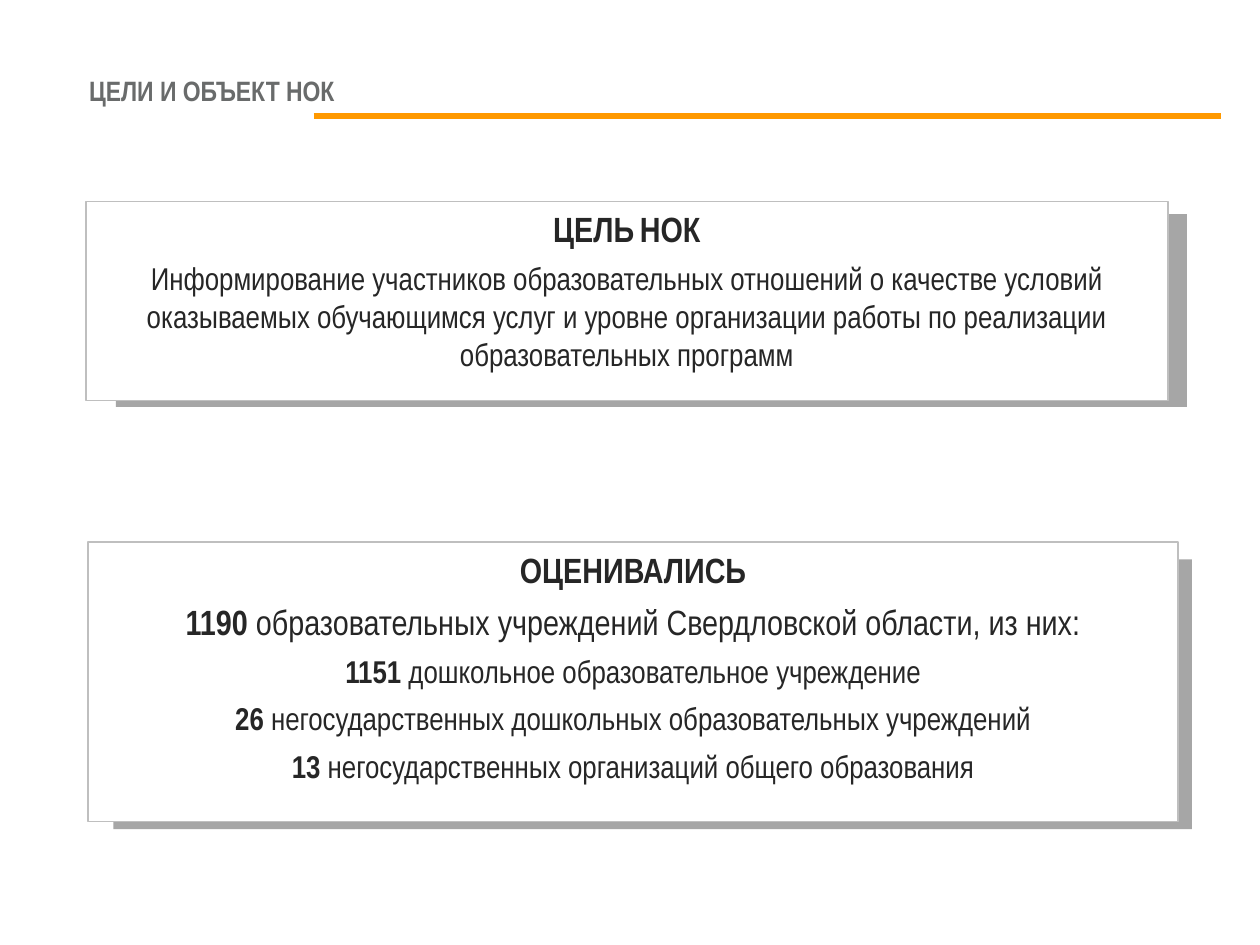
"""Build the slide on the goals and the object of the NOK assessment."""
from lxml import etree
from pptx import Presentation
from pptx.dml.color import RGBColor
from pptx.enum.shapes import MSO_CONNECTOR, MSO_SHAPE
from pptx.enum.text import MSO_ANCHOR, PP_ALIGN
from pptx.oxml.ns import qn
from pptx.util import Inches, Pt

FONT = "Arial Narrow"
ORANGE = RGBColor(0xFF, 0x99, 0x00)
TITLE_GRAY = RGBColor(0x69, 0x6B, 0x6B)
TEXT_DARK = RGBColor(0x26, 0x26, 0x26)
SHADE_GRAY = RGBColor(0xA6, 0xA6, 0xA6)
BORDER_GRAY = RGBColor(0xBF, 0xBF, 0xBF)
WHITE = RGBColor(0xFF, 0xFF, 0xFF)

PANELS = [
    ((0.92, 1.7, 8.5, 1.53), (0.68, 1.6, 8.59, 1.58), [
        (20, [("ЦЕЛЬ", True, 20), (" ", True, 14), ("НОК", True, 20)]),
        (18, [("Информирование участников образовательных отношений о качестве "
               "условий оказываемых обучающимся услуг и уровне организации работы "
               "по реализации образовательных программ", False, 18)]),
    ]),
    ((0.9, 4.44, 8.56, 2.14), (0.7, 4.3, 8.65, 2.22), [
        (20, [("ОЦЕНИВАЛИСЬ", True, 20)]),
        (20, [("1190", True, 20),
              (" образовательных учреждений Свердловской области, из них:", False, 20)]),
        (18, [("1151", True, 18),
              (" дошкольное образовательное учреждение", False, 18)]),
        (18, [("26", True, 18),
              (" негосударственных дошкольных образовательных учреждений", False, 18)]),
        (18, [("13", True, 18),
              (" негосударственных организаций общего образования", False, 18)]),
    ]),
]


def add_rectangle(shapes, place, color):
    box = shapes.add_shape(MSO_SHAPE.RECTANGLE, *[Inches(length) for length in place])
    box.shadow.inherit = False
    box.fill.solid()
    box.fill.fore_color.rgb = color
    box.line.fill.background()
    return box


deck = Presentation()
deck.slide_width = Inches(10)
deck.slide_height = Inches(7.5)
page = deck.slides.add_slide(deck.slide_layouts[6])

title = page.shapes.add_textbox(Inches(0.61), Inches(0.43), Inches(9), Inches(0.57))
title.text_frame.word_wrap = True
title.text_frame.vertical_anchor = MSO_ANCHOR.MIDDLE
para = title.text_frame.paragraphs[0]
para.text = "ЦЕЛИ И ОБЪЕКТ НОК"
para.font.name = FONT
para.font.size = Pt(16)
para.font.bold = True
para.font.color.rgb = TITLE_GRAY

rule = page.shapes.add_connector(
    MSO_CONNECTOR.STRAIGHT, Inches(2.49), Inches(0.92), Inches(9.69), Inches(0.92))
rule.line.color.rgb = ORANGE
rule.line.width = Pt(3)
etree.SubElement(rule._element.spPr, qn("a:effectLst"))

for shade_place, card_place, paragraphs in PANELS:
    panel = page.shapes.add_group_shape()
    add_rectangle(panel.shapes, shade_place, SHADE_GRAY)
    card = add_rectangle(panel.shapes, card_place, WHITE)
    card.line.color.rgb = BORDER_GRAY
    card.line.width = Pt(1)
    frame = card.text_frame
    frame.word_wrap = True
    frame.vertical_anchor = MSO_ANCHOR.TOP
    for index, (size, spans) in enumerate(paragraphs):
        para = frame.add_paragraph() if index else frame.paragraphs[0]
        para.alignment = PP_ALIGN.CENTER
        para.space_before = Pt(0.3 * size if index else 0)
        para.font.name = FONT
        para.font.size = Pt(size)
        para.font.color.rgb = TEXT_DARK
        for text, bold, span_size in spans:
            span = para.add_run()
            span.text = text
            span.font.bold = bold
            if span_size != size:
                span.font.size = Pt(span_size)

deck.save("out.pptx")
